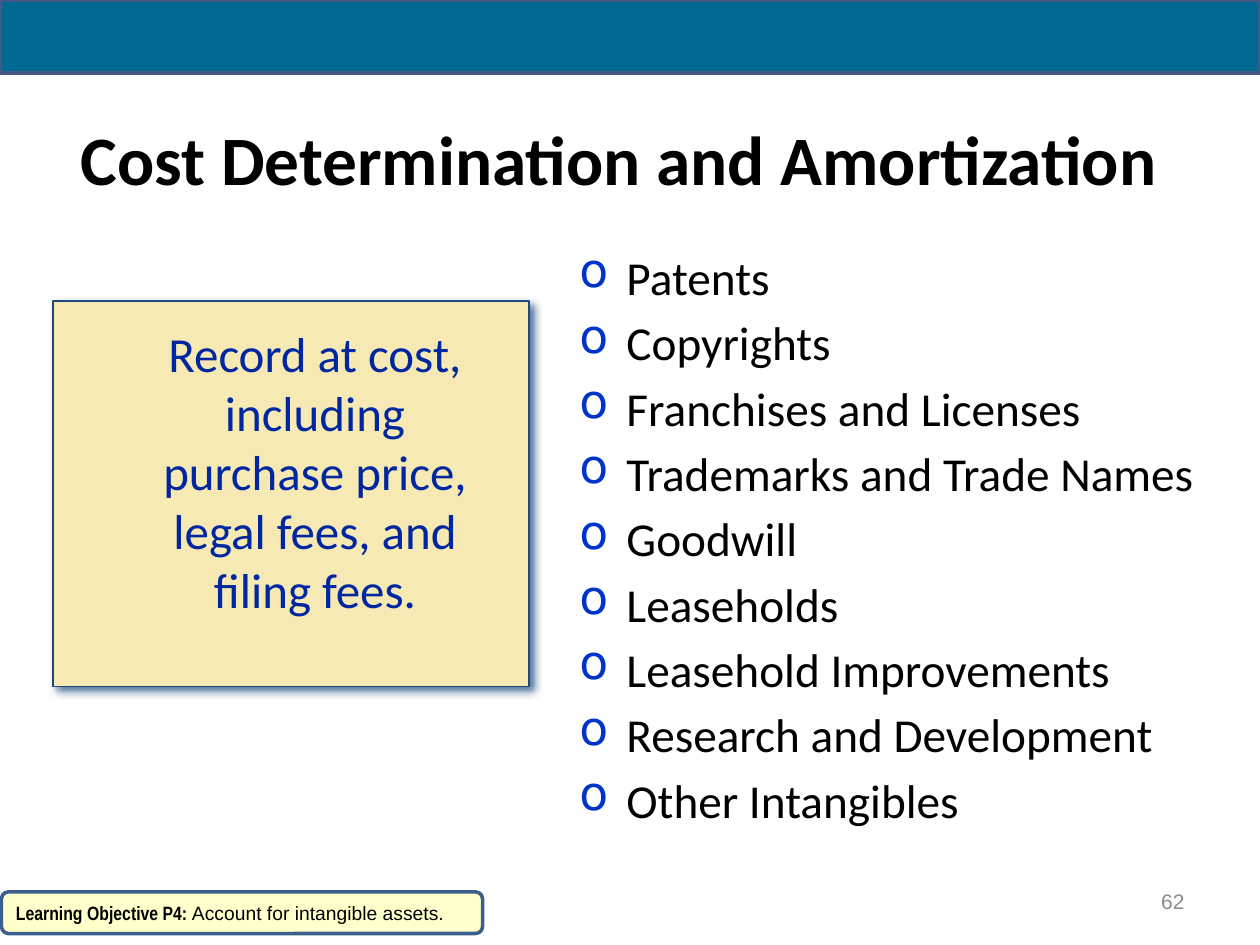
from pptx import Presentation
from pptx.dml.color import RGBColor
from pptx.enum.shapes import MSO_SHAPE as Shape
from pptx.enum.text import MSO_ANCHOR as Anchor, PP_ALIGN as Align
from pptx.oxml import parse_xml
from pptx.oxml.ns import nsdecls
from pptx.util import Cm, Pt

BLACK = RGBColor(0x00, 0x00, 0x00)
GREY = RGBColor(0x8C, 0x8C, 0x8C)
TEAL = RGBColor(0x00, 0x69, 0x91)
VIOLET = RGBColor(0x47, 0x57, 0x85)
SAND = RGBColor(0xF6, 0xE9, 0xB4)
NAVY = RGBColor(0x1F, 0x49, 0x7D)
INK = RGBColor(0x00, 0x27, 0x9F)
BULLET = RGBColor(0x00, 0x33, 0xCC)
CREAM = RGBColor(0xFF, 0xFF, 0xCC)
STEEL = RGBColor(0x3A, 0x5F, 0x8C)

TITLE = dict(name="Calibri", size=Pt(39.6), bold=True, color=BLACK)
ITEM = dict(name="Calibri", size=Pt(27), color=BLACK)
NOTE = dict(name="Calibri", size=Pt(28), color=INK)
NUMBER = dict(name="Arial", size=Pt(12), color=GREY)
LABEL = dict(name="Arial Narrow", size=Pt(11), bold=True, color=BLACK)
GOAL = dict(name="Arial", size=Pt(11), bold=False, color=BLACK)

INDENT = Cm(0.95)
ASSETS = [
    "Patents", "Copyrights", "Franchises and Licenses",
    "Trademarks and Trade Names", "Goodwill", "Leaseholds",
    "Leasehold Improvements", "Research and Development",
    "Other Intangibles",
]


def add_span(para, text, style):
    span = para.add_run()
    span.text = text
    for key, value in style.items():
        if key == "color":
            span.font.color.rgb = value
        else:
            setattr(span.font, key, value)


def add_panel(page, box, kind, fill, line, width):
    panel = page.shapes.add_shape(kind, *map(Cm, box))
    panel.shadow.inherit = False
    panel.fill.solid()
    panel.fill.fore_color.rgb = fill
    panel.line.color.rgb = line
    panel.line.width = Pt(width)
    return panel


def add_text(page, box, anchor=Anchor.TOP):
    frame = page.shapes.add_textbox(*map(Cm, box)).text_frame
    frame.word_wrap = True
    frame.vertical_anchor = anchor
    return frame


def add_line_of_text(page, box, text, style, align):
    para = add_text(page, box, Anchor.MIDDLE).paragraphs[0]
    para.alignment = align
    add_span(para, text, style)


def add_cost_card(page, box):
    left, top, width, height = box
    card = add_panel(page, box, Shape.RECTANGLE, SAND, NAVY, 1)
    # Soft shadow to the lower right
    effects = card._element.spPr.find(
        "{http://schemas.openxmlformats.org/drawingml/2006/main}effectLst")
    effects.append(parse_xml(
        f'<a:outerShdw {nsdecls("a")} blurRad="{Pt(5)}" dist="{Pt(3)}" '
        f'dir="2700000" algn="tl" rotWithShape="0"><a:srgbClr val="{NAVY}">'
        '<a:alpha val="75000"/></a:srgbClr></a:outerShdw>'))
    frame = add_text(page, (left + 0.41, top + 0.2, width - 0.81, height - 0.84))
    frame.margin_top = Cm(0.26)
    para = frame.paragraphs[0]
    para.alignment = Align.CENTER
    para._p.get_or_add_pPr().set("marL", str(INDENT))
    add_span(para, "Record at cost, including purchase price, "
                   "legal fees, and filing fees.", NOTE)


def add_asset_list(page, box):
    frame = add_text(page, box)
    for index, asset in enumerate(ASSETS):
        para = frame.add_paragraph() if index else frame.paragraphs[0]
        if index:
            para.space_before = Pt(4.9)
        props = para._p.get_or_add_pPr()
        props.set("marL", str(INDENT))
        props.set("indent", str(-INDENT))
        props.append(parse_xml(
            f'<a:buClr {nsdecls("a")}><a:srgbClr val="{BULLET}"/></a:buClr>'))
        props.append(parse_xml(f'<a:buChar {nsdecls("a")} char="o"/>'))
        add_span(para, asset, ITEM)


def add_objective(page, box):
    badge = add_panel(page, box, Shape.ROUNDED_RECTANGLE, CREAM, STEEL, 2)
    frame = badge.text_frame
    frame.word_wrap = True
    frame.vertical_anchor = Anchor.MIDDLE
    para = frame.paragraphs[0]
    para.alignment = Align.LEFT
    add_span(para, "Learning Objective P4: ", LABEL)
    add_span(para, "Account for intangible assets.", GOAL)


def main():
    deck = Presentation()
    deck.slide_width, deck.slide_height = Cm(25.4), Cm(19.05)
    page = deck.slides.add_slide(deck.slide_layouts[6])

    # Main content
    add_cost_card(page, (1.07, 6.07, 9.6, 7.77))
    add_line_of_text(page, (0.63, 1.7, 23.7, 2.97),
                     "Cost Determination and Amortization", TITLE, Align.CENTER)
    add_asset_list(page, (11.43, 4.88, 13.34, 12.78))

    # Top band and footer
    add_panel(page, (0, 0, 25.4, 1.47), Shape.RECTANGLE, TEAL, VIOLET, 2.25)
    add_line_of_text(page, (18.21, 17.65, 5.92, 1.02), "62", NUMBER, Align.RIGHT)
    add_objective(page, (0.03, 17.98, 9.7, 0.84))

    deck.save("out.pptx")


if __name__ == "__main__":
    main()
